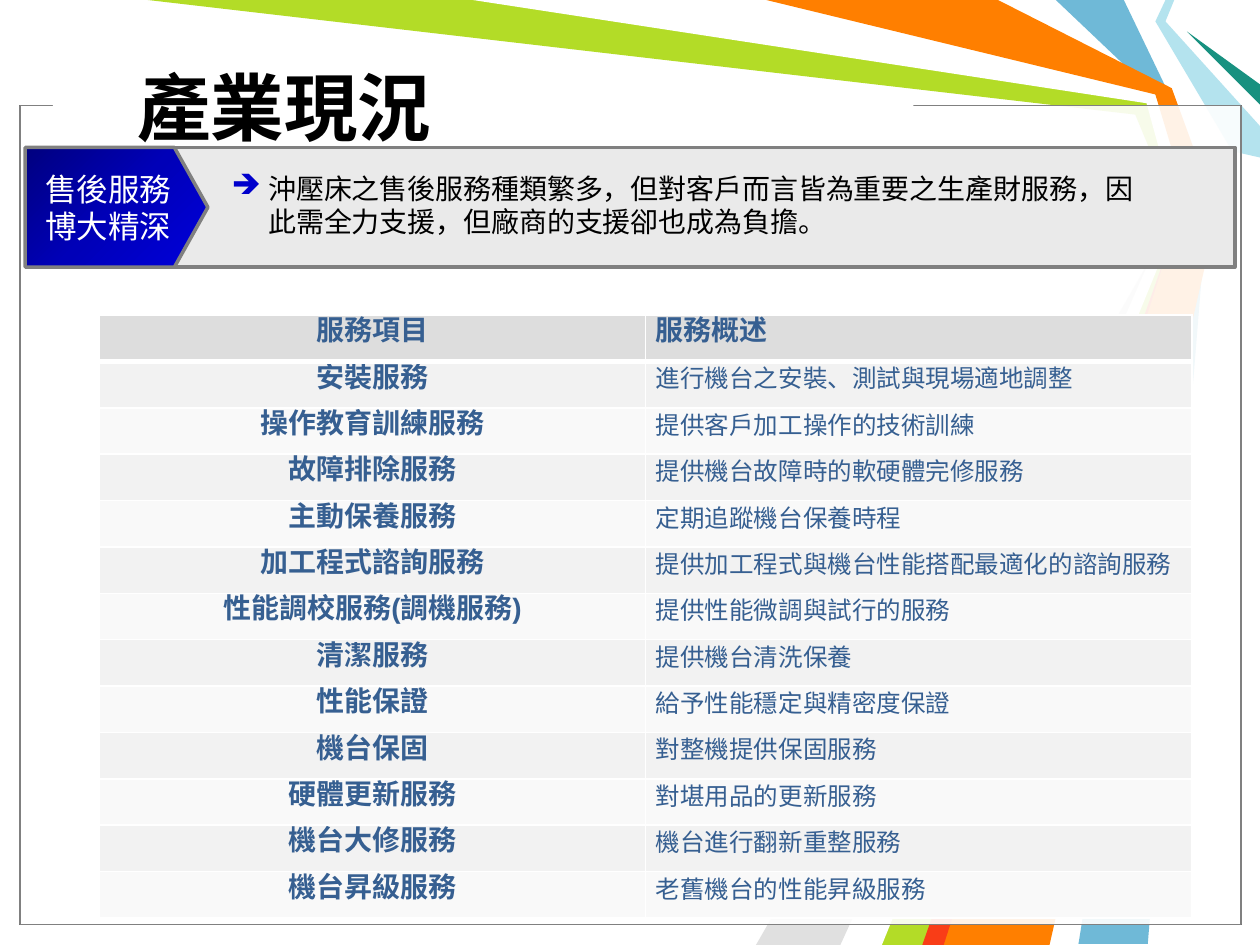
"""Build the after-sales service overview slide."""
from copy import deepcopy
from dataclasses import dataclass
from typing import Optional

from lxml import etree
from pptx import Presentation
from pptx import util as u
from pptx.dml import color as c
from pptx.enum import shapes as s, text as t
from pptx.oxml import ns

BLACK = c.RGBColor(0x00, 0x00, 0x00)
WHITE = c.RGBColor(0xFF, 0xFF, 0xFF)
GREY = c.RGBColor(0x80, 0x80, 0x80)
SILVER = c.RGBColor(0xE0, 0xE0, 0xE0)
PALE = c.RGBColor(0xEA, 0xEA, 0xEA)
HEAD = c.RGBColor(0xDD, 0xDD, 0xDD)
BANDS = (c.RGBColor(0xF9, 0xF9, 0xF9), c.RGBColor(0xF2, 0xF2, 0xF2))
INK = c.RGBColor(0x36, 0x5F, 0x91)
SKY = c.RGBColor(0x6F, 0xB9, 0xD7)
LIME = c.RGBColor(0xB3, 0xDC, 0x27)
ICE = c.RGBColor(0xB4, 0xE3, 0xEE)
TEAL = c.RGBColor(0x18, 0x91, 0x80)
ORANGE = c.RGBColor(0xFF, 0x7F, 0x00)
RED = c.RGBColor(0xF9, 0x3D, 0x17)
BLUES = (c.RGBColor(0, 0, 0x7F), c.RGBColor(0, 0, 0xB8), c.RGBColor(0, 0, 0xDB))
FONT = "Arial"


@dataclass
class Ribbon:
    """A coloured band given by its corners in inches."""
    fill: c.RGBColor
    points: list[tuple[float, float]]


@dataclass
class Panel:
    """A preset shape with its fill and outline."""
    left: float
    top: float
    width: float
    height: float
    fill: c.RGBColor
    line: Optional[c.RGBColor] = None
    weight: float = 0.75
    alpha: int = 100
    kind: s.MSO_SHAPE = s.MSO_SHAPE.RECTANGLE


RIBBONS = [
    Ribbon(SKY, [(8.92, 0), (9.29, 0.77), (9.58, 1.67), (9.11, 7.49), (8.56, 7.49),
                 (9.5, 1.67), (9.17, 0.75), (8.38, 0)]),
    Ribbon(LIME, [(1.17, 0), (3.83, 0), (9.14, 0.78), (9.42, 1.69), (7.42, 7.5),
                  (6.92, 7.5), (9.35, 1.73), (9.01, 0.91)]),
    Ribbon(SILVER, [(6.67, 7.5), (9.27, 1.81), (6, 7.5)]),
    Ribbon(WHITE, [(3.75, 0), (9.1, 0.82), (9.32, 1.62), (6.75, 7.5), (7, 7.5),
                   (9.41, 1.58), (9.17, 0.75), (6, 0)]),
    Ribbon(ICE, [(9.25, 0), (9.17, 0.17), (9.78, 1.2), (10, 1.25), (10, 1),
                 (9.25, 0.17), (9.32, 0)]),
    Ribbon(TEAL, [(10, 0.83), (9.42, 0.25), (10, 0.67)]),
    Ribbon(ORANGE, [(6.08, 0), (7.92, 0), (9.3, 0.7), (9.66, 1.69), (8.33, 7.5),
                    (7.33, 7.5), (9.42, 1.58), (9.17, 0.75)]),
    Ribbon(RED, [(7.32, 7.5), (9.32, 1.83), (7.49, 7.5)]),
]
FRAMES = [
    Panel(0.16, 0.84, 9.69, 6.5, WHITE, BLACK, alpha=69),
    Panel(0.16, 0.84, 9.69, 6.5, WHITE, GREY, alpha=69),
    Panel(0.42, 0.74, 6.83, 0.17, WHITE),
]
BANNER = Panel(1.21, 1.17, 8.59, 0.95, PALE, GREY, 2)
ARROW = Panel(0.2, 1.17, 1.45, 0.95, BLUES[0], GREY, 2, kind=s.MSO_SHAPE.PENTAGON)
ROWS = [
    ("服務項目", "服務概述"),
    ("安裝服務", "進行機台之安裝、測試與現場適地調整"),
    ("操作教育訓練服務", "提供客戶加工操作的技術訓練"),
    ("故障排除服務", "提供機台故障時的軟硬體完修服務"),
    ("主動保養服務", "定期追蹤機台保養時程"),
    ("加工程式諮詢服務", "提供加工程式與機台性能搭配最適化的諮詢服務"),
    ("性能調校服務(調機服務)", "提供性能微調與試行的服務"),
    ("清潔服務", "提供機台清洗保養"),
    ("性能保證", "給予性能穩定與精密度保證"),
    ("機台保固", "對整機提供保固服務"),
    ("硬體更新服務", "對堪用品的更新服務"),
    ("機台大修服務", "機台進行翻新重整服務"),
    ("機台昇級服務", "老舊機台的性能昇級服務"),
]


def style(para, size: float, ink: c.RGBColor, bold: bool = False) -> None:
    """Format every run of a paragraph."""
    for run in para.runs:
        run.font.name = FONT
        run.font.size = u.Pt(size)
        run.font.bold = bold
        run.font.color.rgb = ink


def draw_ribbon(slide, band: Ribbon) -> None:
    """Draw a ribbon as a closed outline."""
    first, *rest = [(u.Inches(x), u.Inches(y)) for x, y in band.points]
    pen = slide.shapes.build_freeform(*first)
    pen.add_line_segments(rest, close=True)
    shape = pen.convert_to_shape()
    shape.shadow.inherit = False
    shape.fill.solid()
    shape.fill.fore_color.rgb = band.fill
    shape.line.fill.background()


def draw_panel(slide, panel: Panel):
    """Draw a panel and return its shape."""
    box = map(u.Inches, (panel.left, panel.top, panel.width, panel.height))
    shape = slide.shapes.add_shape(panel.kind, *box)
    shape.shadow.inherit = False
    shape.fill.solid()
    shape.fill.fore_color.rgb = panel.fill
    if panel.alpha < 100:
        tone = shape._element.spPr.find(ns.qn("a:solidFill"))[0]
        etree.SubElement(tone, ns.qn("a:alpha"), val=str(panel.alpha * 1000))
    if panel.line is None:
        shape.line.fill.background()
    else:
        shape.line.color.rgb = panel.line
        shape.line.width = u.Pt(panel.weight)
    return shape


def draw_arrow(slide) -> None:
    """Draw the gradient label at the left of the banner."""
    shape = draw_panel(slide, ARROW)
    shape.adjustments[0] = 0.28
    shape.fill.gradient()
    shape.fill.gradient_angle = 315
    stops = shape._element.spPr.find(ns.qn("a:gradFill")).find(ns.qn("a:gsLst"))
    stops.insert(1, deepcopy(stops[0]))
    stops[1].set("pos", "50000")
    for stop, tone in zip(shape.fill.gradient_stops, BLUES):
        stop.color.rgb = tone
    frame = shape.text_frame
    frame.text = "售後服務博大精深"
    frame.word_wrap = True
    frame.vertical_anchor = t.MSO_ANCHOR.MIDDLE
    frame.paragraphs[0].alignment = t.PP_ALIGN.CENTER
    style(frame.paragraphs[0], 18, WHITE)


def add_text(slide, box: tuple[float, ...], words: str, size: float, bold: bool = False):
    """Add a wrapped black text box and return its frame."""
    frame = slide.shapes.add_textbox(*map(u.Inches, box)).text_frame
    frame.word_wrap = True
    frame.text = words
    style(frame.paragraphs[0], size, BLACK, bold)
    return frame


def add_bullet(para) -> None:
    """Give a paragraph a blue arrow bullet with a hanging indent."""
    props = para._p.get_or_add_pPr()
    props.set("marL", str(u.Inches(0.29)))
    props.set("indent", str(u.Inches(-0.29)))
    tint = etree.SubElement(props, ns.qn("a:buClr"))
    etree.SubElement(tint, ns.qn("a:srgbClr"), val="0000CC")
    etree.SubElement(props, ns.qn("a:buChar"), char="➔")


def edge(cell, side: str, weight: float) -> None:
    """Add a white border to one side of a cell."""
    props = cell._tc.get_or_add_tcPr()
    line = etree.SubElement(props, ns.qn(f"a:ln{side}"), w=str(u.Pt(weight)))
    fill = etree.SubElement(line, ns.qn("a:solidFill"))
    etree.SubElement(fill, ns.qn("a:srgbClr"), val=str(WHITE))


def draw_table(slide) -> None:
    """Draw the banded table of services."""
    box = map(u.Inches, (0.79, 2.5, 8.67, 4.79))
    table = slide.shapes.add_table(len(ROWS), 2, *box).table
    for i, row in enumerate(ROWS):
        for j, words in enumerate(row):
            cell = table.cell(i, j)
            thick = {"T": i == 1, "B": i == 0}
            for side in "LRTB":
                edge(cell, side, 3 if thick.get(side) else 1)
            cell.fill.solid()
            cell.fill.fore_color.rgb = BANDS[i % 2] if i else HEAD
            cell.margin_left = cell.margin_right = u.Inches(0.08)
            cell.margin_top = cell.margin_bottom = 0
            cell.vertical_anchor = t.MSO_ANCHOR.MIDDLE
            para = cell.text_frame.paragraphs[0]
            para.text = words
            para.alignment = t.PP_ALIGN.JUSTIFY if j else t.PP_ALIGN.CENTER
            para.line_spacing = u.Pt(12)
            strong = i == 0 or j == 0
            style(para, 16 if strong else 14, INK, strong)


def main() -> None:
    """Build and save the slide."""
    deck = Presentation()
    deck.slide_width, deck.slide_height = u.Inches(10), u.Inches(7.5)
    slide = deck.slides.add_slide(deck.slide_layouts[6])
    for band in RIBBONS:
        draw_ribbon(slide, band)
    for panel in FRAMES:
        draw_panel(slide, panel)
    title = add_text(slide, (0.99, 0.22, 6.89, 1.25), "產業現況", 42, True)
    title.vertical_anchor = t.MSO_ANCHOR.MIDDLE
    draw_table(slide)
    draw_panel(slide, BANNER)
    draw_arrow(slide)
    note = add_text(slide, (1.74, 1.31, 7.55, 0.64),
                    "沖壓床之售後服務種類繁多，但對客戶而言皆為重要之生產財服務，"
                    "因此需全力支援，但廠商的支援卻也成為負擔。", 16)
    add_bullet(note.paragraphs[0])
    deck.save("out.pptx")


if __name__ == "__main__":
    main()
